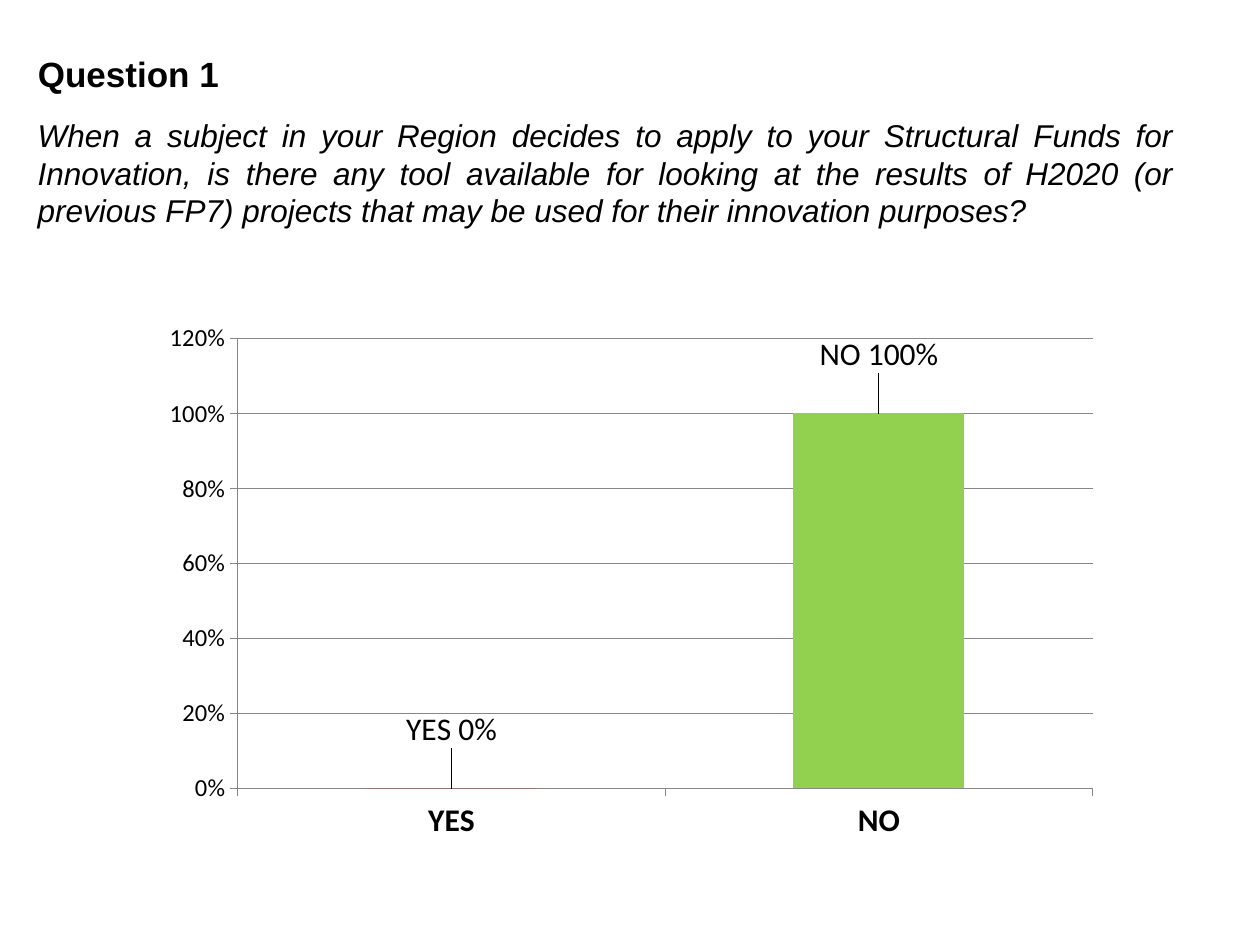
from lxml import etree
from pptx import Presentation
from pptx.chart.data import CategoryChartData
from pptx.dml.color import RGBColor
from pptx.enum.chart import XL_CHART_TYPE as ChartType
from pptx.enum.chart import XL_LABEL_POSITION as LabelPosition
from pptx.enum.chart import XL_TICK_MARK as TickMark
from pptx.enum.text import MSO_ANCHOR as Anchor
from pptx.enum.text import PP_ALIGN as Align
from pptx.oxml.ns import qn
from pptx.util import Inches, Pt

BLACK = RGBColor(0x00, 0x00, 0x00)
GRAY = RGBColor(0x87, 0x87, 0x87)
RED = RGBColor(0xFF, 0x00, 0x00)
GREEN = RGBColor(0x92, 0xD0, 0x50)

LEFT, WIDTH = Inches(0.2), Inches(9.21)
QUESTION = (
    "When a subject in your Region decides to apply to your Structural Funds "
    "for Innovation, is there any tool available for looking at the results "
    "of H2020 (or previous FP7) projects that may be used for their "
    "innovation purposes?"
)
# Answer, share of replies, bar colour
ANSWERS = [("YES", 0, RED), ("NO", 1, GREEN)]


def fill_text(shape, text, size, bold=False, italic=False):
    """Write one justified paragraph into a shape."""
    frame = shape.text_frame
    frame.word_wrap = True
    frame.vertical_anchor = Anchor.TOP
    frame.text = text
    paragraph = frame.paragraphs[0]
    paragraph.alignment = Align.JUSTIFY
    font = paragraph.font
    font.name, font.size = "Arial", Pt(size)
    font.bold, font.italic = bold, italic
    font.color.rgb = BLACK


def make_layout(**settings):
    """Return a manual chart layout element."""
    layout = etree.Element(qn("c:layout"))
    manual = etree.SubElement(layout, qn("c:manualLayout"))
    for name, value in settings.items():
        etree.SubElement(manual, qn(f"c:{name}")).set("val", str(value))
    return layout


def place_plot(chart):
    """Fix the inner plot area within the chart frame."""
    plot_area = chart.plots[0]._element.getparent()
    for old in plot_area.findall(qn("c:layout")):
        plot_area.remove(old)
    plot_area.insert(0, make_layout(
        layoutTarget="inner", xMode="edge", yMode="edge",
        x=0.113, y=0.094, w=0.845, h=0.768))


def style_axis(axis, size, bold=False):
    axis.major_tick_mark = TickMark.OUTSIDE
    axis.minor_tick_mark = TickMark.NONE
    axis.format.line.color.rgb = GRAY
    axis.format.line.width = Pt(0.75)
    font = axis.tick_labels.font
    font.size, font.bold = Pt(size), bold


def style_bar(point, label, color):
    """Colour a bar and raise its label above the end."""
    point.format.fill.solid()
    point.format.fill.fore_color.rgb = color
    data_label = point.data_label
    data_label.text_frame.text = label
    font = data_label.text_frame.paragraphs[0].runs[0].font
    font.name, font.size, font.bold = "Calibri", Pt(18), False
    font.color.rgb = BLACK
    data_label.position = LabelPosition.OUTSIDE_END
    index = data_label._dLbl.find(qn("c:idx"))
    index.addnext(make_layout(x=0, y=-0.06))


def add_answer_chart(slide):
    data = CategoryChartData(number_format="0%")
    data.categories = [answer for answer, _, _ in ANSWERS]
    data.add_series("Series 1", [share for _, share, _ in ANSWERS])
    chart = slide.shapes.add_chart(
        ChartType.COLUMN_CLUSTERED, Inches(0.98), Inches(2.25),
        Inches(8.03), Inches(4.65), data).chart
    chart.has_title = chart.has_legend = False
    chart.font.name, chart.font.size = "Calibri", Pt(10)
    chart.font.color.rgb = BLACK
    place_plot(chart)

    # Axes
    style_axis(chart.category_axis, 18, bold=True)
    value_axis = chart.value_axis
    style_axis(value_axis, 14)
    value_axis.minimum_scale, value_axis.maximum_scale = 0, 1.2
    value_axis.major_unit = 0.2
    value_axis.tick_labels.number_format = "0%"
    value_axis.tick_labels.number_format_is_linked = False
    value_axis.major_gridlines.format.line.color.rgb = GRAY
    value_axis.major_gridlines.format.line.width = Pt(0.75)

    # Bars
    plot = chart.plots[0]
    plot.gap_width = 150
    plot.vary_by_categories = False
    series = plot.series[0]
    series.invert_if_negative = False
    series.format.fill.solid()
    series.format.fill.fore_color.rgb = RED
    for index, (answer, share, color) in enumerate(ANSWERS):
        style_bar(series.points[index], f"{answer} {share:.0%}", color)


def main():
    presentation = Presentation()
    presentation.slide_width = Inches(10)
    presentation.slide_height = Inches(7.5)
    slide = presentation.slides.add_slide(presentation.slide_layouts[5])

    # Heading
    title = slide.shapes.title
    title.left, title.top = LEFT, Inches(0.37)
    title.width, title.height = WIDTH, Inches(0.5)
    fill_text(title, "Question 1", 20, bold=True)

    # Question
    question = slide.shapes.add_textbox(LEFT, Inches(0.87), WIDTH, Inches(1.03))
    fill_text(question, QUESTION, 18, italic=True)

    add_answer_chart(slide)
    presentation.save("out.pptx")


if __name__ == "__main__":
    main()
